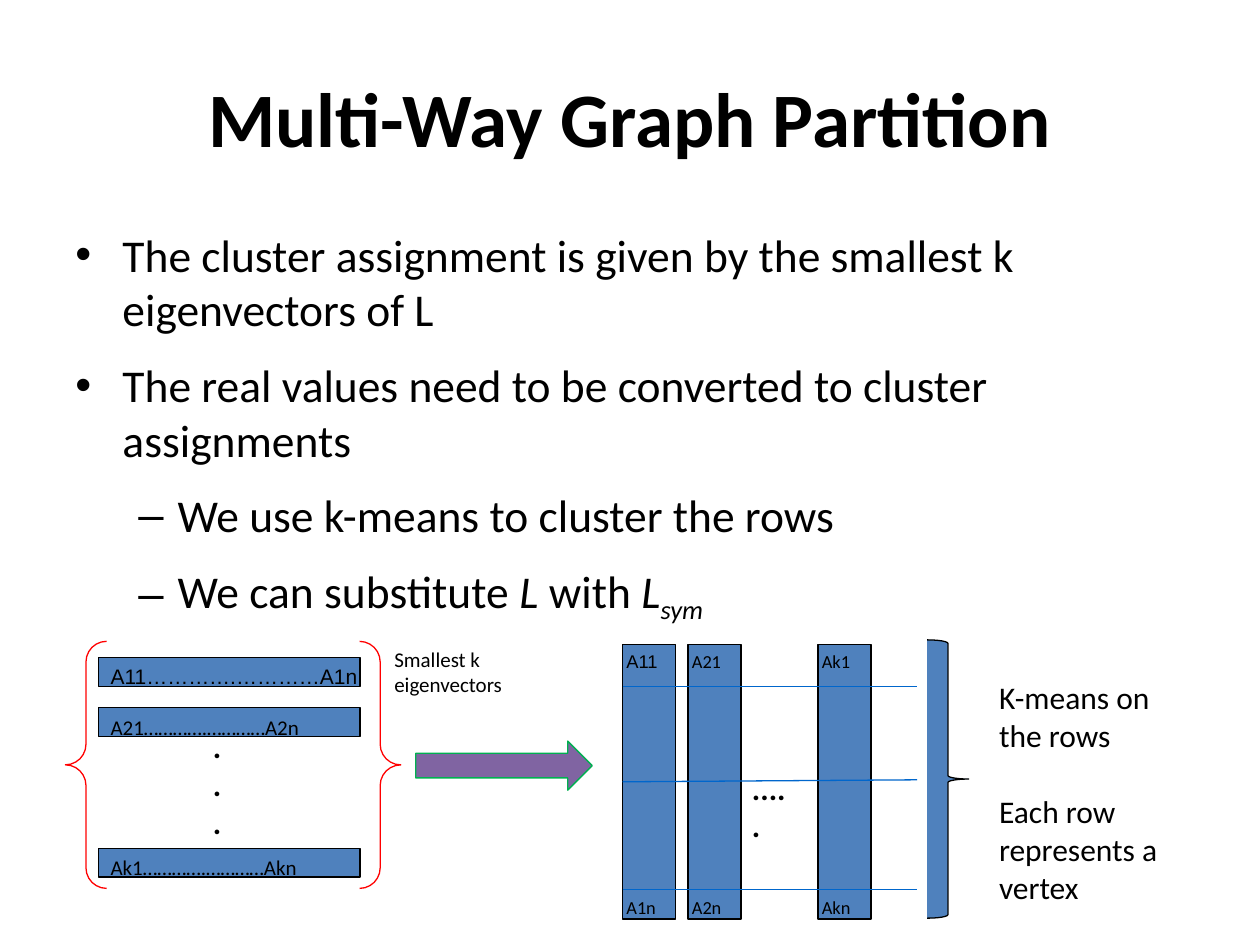
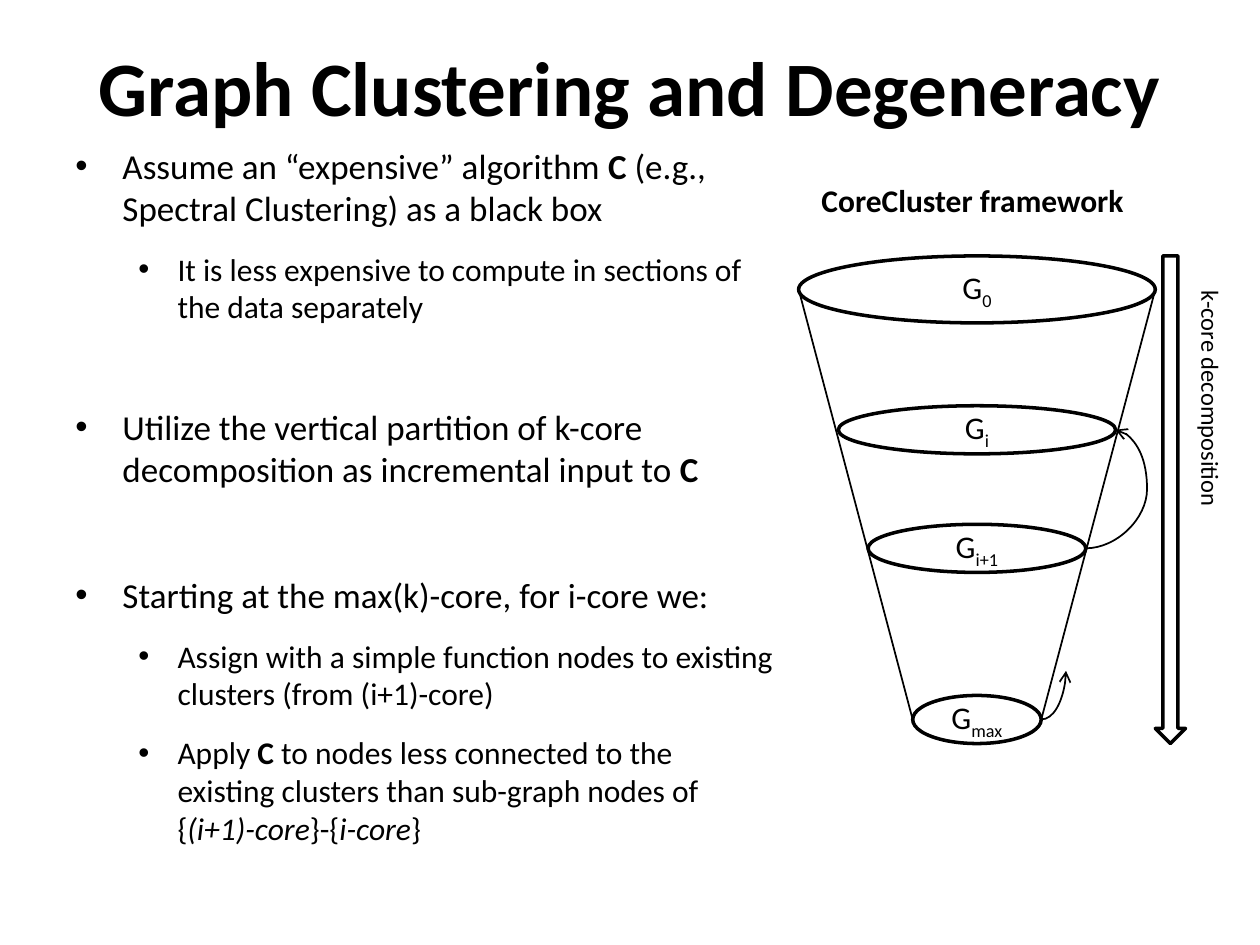
import dataclasses

import lxml.etree
import pptx
import pptx.dml.color
import pptx.enum.shapes
import pptx.enum.text
import pptx.oxml.ns
import pptx.util

Cm = pptx.util.Cm
Pt = pptx.util.Pt
qn = pptx.oxml.ns.qn
Kind = pptx.enum.shapes.MSO_SHAPE
Link = pptx.enum.shapes.MSO_CONNECTOR
Align = pptx.enum.text.PP_ALIGN
Anchor = pptx.enum.text.MSO_ANCHOR


@dataclasses.dataclass(frozen=True)
class Theme:
    """Fonts, colours and type sizes shared by the slides."""
    font: str = "Calibri"
    sans: str = "Arial"
    ink: str = "000000"
    paper: str = "FFFFFF"
    blue: str = "4F81BD"
    violet: str = "8064A2"
    green: str = "00B050"
    red: str = "FF0000"
    rule: str = "0066CC"
    title: float = 44
    large: float = 26
    main: float = 20
    text: float = 18
    side: float = 14
    note: float = 12
    tiny: float = 10.5
    gap: float = 12
    thin: float = 0.75
    fine: float = 1
    bold: float = 2


@dataclasses.dataclass(frozen=True)
class Box:
    """A rectangle in centimetres."""
    x: float
    y: float
    w: float
    h: float

    def sub(self, x, y, w, h):
        """Return a box placed relative to this one."""
        return Box(self.x + x, self.y + y, w, h)

    def emu(self):
        """Return left, top, width and height as lengths."""
        return [Cm(v) for v in (self.x, self.y, self.w, self.h)]


THEME = Theme()


def tint(code):
    """Turn a hex code into a colour."""
    return pptx.dml.color.RGBColor.from_string(code)


def write(frame, text, size=THEME.text, font=THEME.font, bold=False,
          align=Align.LEFT, before=0, bullet=None, level=0):
    """Add a paragraph; text is a string or (text, flags) runs with flags b, i, s."""
    para = frame.paragraphs[0] if not frame.text else frame.add_paragraph()
    para.alignment = align
    para.space_before = Pt(before)
    if bullet:
        props = para._p.get_or_add_pPr()
        props.set("marL", str(Cm((0.95, 2.06)[level])))
        props.set("indent", str(-Cm((0.95, 0.79)[level])))
        lxml.etree.SubElement(props, qn("a:buFont"), typeface=THEME.sans)
        lxml.etree.SubElement(props, qn("a:buChar"), char=bullet)
        para.level = level
    for part, flags in [(text, "")] if isinstance(text, str) else text:
        run = para.add_run()
        run.text = part
        run.font.name = font
        run.font.size = Pt(size)
        run.font.color.rgb = tint(THEME.ink)
        run.font.bold = bold or "b" in flags
        run.font.italic = "i" in flags
        if "s" in flags:
            run._r.get_or_add_rPr().set("baseline", "-25000")


def label(slide, box, *lines, **style):
    """Add a wrapping text box with one paragraph per line."""
    area = slide.shapes.add_textbox(*box.emu())
    area.text_frame.word_wrap = True
    for line in lines:
        write(area.text_frame, line, **style)
    return area


def draw(slide, kind, box, fill=None, line=THEME.ink, width=THEME.thin):
    """Add a preset shape without shadow."""
    shape = slide.shapes.add_shape(kind, *box.emu())
    shape.shadow.inherit = False
    if fill:
        shape.fill.solid()
        shape.fill.fore_color.rgb = tint(fill)
    else:
        shape.fill.background()
    shape.line.color.rgb = tint(line)
    shape.line.width = Pt(width)
    return shape


def join(slide, start, end, line=THEME.ink, width=THEME.fine, kind=Link.STRAIGHT):
    """Add a connector between two points."""
    link = slide.shapes.add_connector(kind, *[Cm(v) for v in (*start, *end)])
    link.line.color.rgb = tint(line)
    link.line.width = Pt(width)
    lxml.etree.SubElement(link.element.spPr, qn("a:effectLst"))
    return link


def curve(slide, start, end, preset, bend=None):
    """Add a curved arrow with a given preset and bend."""
    link = join(slide, start, end, kind=Link.CURVE)
    props = link.element.spPr
    lxml.etree.SubElement(props.find(qn("a:ln")), qn("a:tailEnd"), type="arrow")
    shape = props.find(qn("a:prstGeom"))
    shape.set("prst", preset)
    if bend:
        guides = shape.find(qn("a:avLst"))
        if guides is None:
            guides = lxml.etree.SubElement(shape, qn("a:avLst"))
        lxml.etree.SubElement(guides, qn("a:gd"), name="adj1", fmla=f"val {bend}")


def title(slide, top, text):
    """Add the centred slide title."""
    area = label(slide, Box(1.27, top, 22.86, 3.18), text,
                 size=THEME.title, bold=True, align=Align.CENTER)
    area.text_frame.vertical_anchor = Anchor.MIDDLE


def body(slide, box, items):
    """Add bullets given as (level, bullet, size, space before, text)."""
    frame = label(slide, box).text_frame
    for level, bullet, size, before, text in items:
        write(frame, text, size=size, before=before, bullet=bullet, level=level)


def plate(slide, box):
    """Add a blue block and return its top-anchored text frame."""
    shape = draw(slide, Kind.RECTANGLE, box, THEME.blue)
    frame = shape.text_frame
    frame.word_wrap = False
    frame.vertical_anchor = Anchor.TOP
    return shape, frame


def vectors(slide, box):
    """Draw the braced list of eigenvectors."""
    rows = (("A11………….…………A1n", 0.33, THEME.sans),
            ("A21………….…………A2n", 1.34, THEME.font),
            ("Ak1………….…………Akn", 4.17, THEME.font))
    for text, top, font in rows:
        frame = plate(slide, box.sub(0.66, top, 5.28, 0.58))[1]
        write(frame, text, size=THEME.note, font=font)
    label(slide, box.sub(2.72, 1.6, 0.58, 2.57), *"...", bold=True)
    draw(slide, Kind.DOUBLE_BRACE, box, line=THEME.red)


def matrix(slide, box):
    """Draw the columns crossed by row lines, closed by a brace."""
    cols = []
    for left, name, font in ((0, "1", THEME.sans), (1.32, "2", THEME.font),
                             (3.94, "k", THEME.font)):
        col, frame = plate(slide, box.sub(left, 0.09, 1.07, 5.54))
        frame.margin_left = Cm(0.08)
        write(frame, f"A{name}1", size=THEME.tiny, font=font)
        write(frame, f"A{name}n", size=THEME.tiny, before=128)
        cols.append(col)
    label(slide, box.sub(2.36, 2.47, 1.3, 0.94), ".....", bold=True)
    lines = [join(slide, (box.x, box.y + a), (box.x + 5.94, box.y + b),
                  THEME.rule, THEME.thin)
             for a, b in ((0.94, 0.94), (2.86, 2.82), (5.03, 5.03))]
    lines[1].begin_connect(cols[0], 1)
    draw(slide, Kind.RIGHT_BRACE, box.sub(6.14, 0, 0.84, box.h), THEME.blue)


def funnel(slide, box):
    """Draw nested cores as discs of a funnel with its direction arrow."""
    mid = box.x + box.w / 2
    ends = []
    for name, wide, top, high in (("0", 7.19, 0, 1.35), ("i", 5.59, 3.02, 0.97),
                                  ("i+1", 4.39, 5.41, 0.97), ("max", 2.59, 8.86, 0.97)):
        disc = draw(slide, Kind.OVAL, box.sub((box.w - wide) / 2, top, wide, high),
                    width=THEME.bold)
        write(disc.text_frame, [("G", ""), (name, "s")], align=Align.CENTER)
        ends.append((wide / 2, box.y + top + high / 2))
    (rim, high), (base, low) = ends[0], ends[-1]
    for side in (-1, 1):
        join(slide, (mid + side * rim, high), (mid + side * base, low))
    outer, inner, last = [(mid + half, y) for half, y in ends[1:]]
    curve(slide, inner, outer, "curvedConnector3", 205800)
    curve(slide, last, (last[0] + 0.5, last[1] - 0.98), "curvedConnector2")
    draw(slide, Kind.DOWN_ARROW, box.sub(box.w, 0, 0.61, box.h),
         THEME.paper, width=THEME.bold)
    side = label(slide, box.sub(5.13, 3.2, 6.35, 0.86), "k-core decomposition",
                 size=THEME.side)
    side.rotation = 90


def multiway(slide):
    """Build the slide on multi-way partition."""
    title(slide, 0.76, "Multi-Way Graph Partition")
    items = (
        (0, "•", "The cluster assignment is given by the smallest k eigenvectors of L"),
        (0, "•", "The real values need to be converted to cluster assignments"),
        (1, "–", "We use k-means to cluster the rows"),
        (1, "–", [("We can substitute ", ""), ("L", "i"), (" with ", ""),
                  ("L", "i"), ("sym", "is")]))
    body(slide, Box(1.27, 4.45, 22.86, 12.57),
         [(level, mark, THEME.large, THEME.gap, text) for level, mark, text in items])
    vectors(slide, Box(1.32, 12.93, 6.76, 4.98))
    label(slide, Box(7.7, 12.9, 3.63, 1.27), "Smallest k eigenvectors", size=THEME.note)
    draw(slide, Kind.RIGHT_ARROW, Box(8.38, 14.94, 3.56, 0.99),
         THEME.violet, THEME.green)
    matrix(slide, Box(12.55, 12.9, 6.98, 5.61))
    label(slide, Box(19.89, 13.54, 4.14, 4.37), "K-means on the rows",
          "Each row represents a vertex", before=22)


def cores(slide):
    """Build the slide on clustering and degeneracy."""
    title(slide, 0.13, "Graph Clustering and Degeneracy")
    main, text, gap = THEME.main, THEME.text, THEME.gap
    body(slide, Box(1.27, 2.79, 14.63, 14.22), (
        (0, "•", main, gap, [("Assume an “expensive” algorithm ", ""), ("C", "b"),
                             (" (e.g., Spectral Clustering) as a black box", "")]),
        (1, "•", text, gap,
         "It is less expensive to compute in sections of the data separately"),
        (0, "•", main, 46, [("Utilize the vertical partition of k-core decomposition "
                             "as incremental input to ", ""), ("C", "b")]),
        (0, "•", main, 48, "Starting at the max(k)-core, for i-core we:"),
        (1, "•", text, gap, "Assign with a simple function nodes to existing clusters "
                            "(from (i+1)-core)"),
        (1, "•", text, gap, [("Apply ", ""), ("C", "b"),
                             (" to nodes less connected to the existing clusters "
                              "than sub-graph nodes of {", ""),
                             ("(i+1)-core", "i"), ("}-{", ""), ("i-core", "i"),
                             ("}", "")])))
    funnel(slide, Box(16.1, 5.16, 7.19, 9.83))
    label(slide, Box(16.31, 3.53, 8, 1.02), "CoreCluster framework", bold=True)


def main():
    """Build and save the deck."""
    deck = pptx.Presentation()
    deck.slide_width, deck.slide_height = Cm(25.4), Cm(19.05)
    for build in (multiway, cores):
        build(deck.slides.add_slide(deck.slide_layouts[6]))
    deck.save("out.pptx")


if __name__ == "__main__":
    main()
